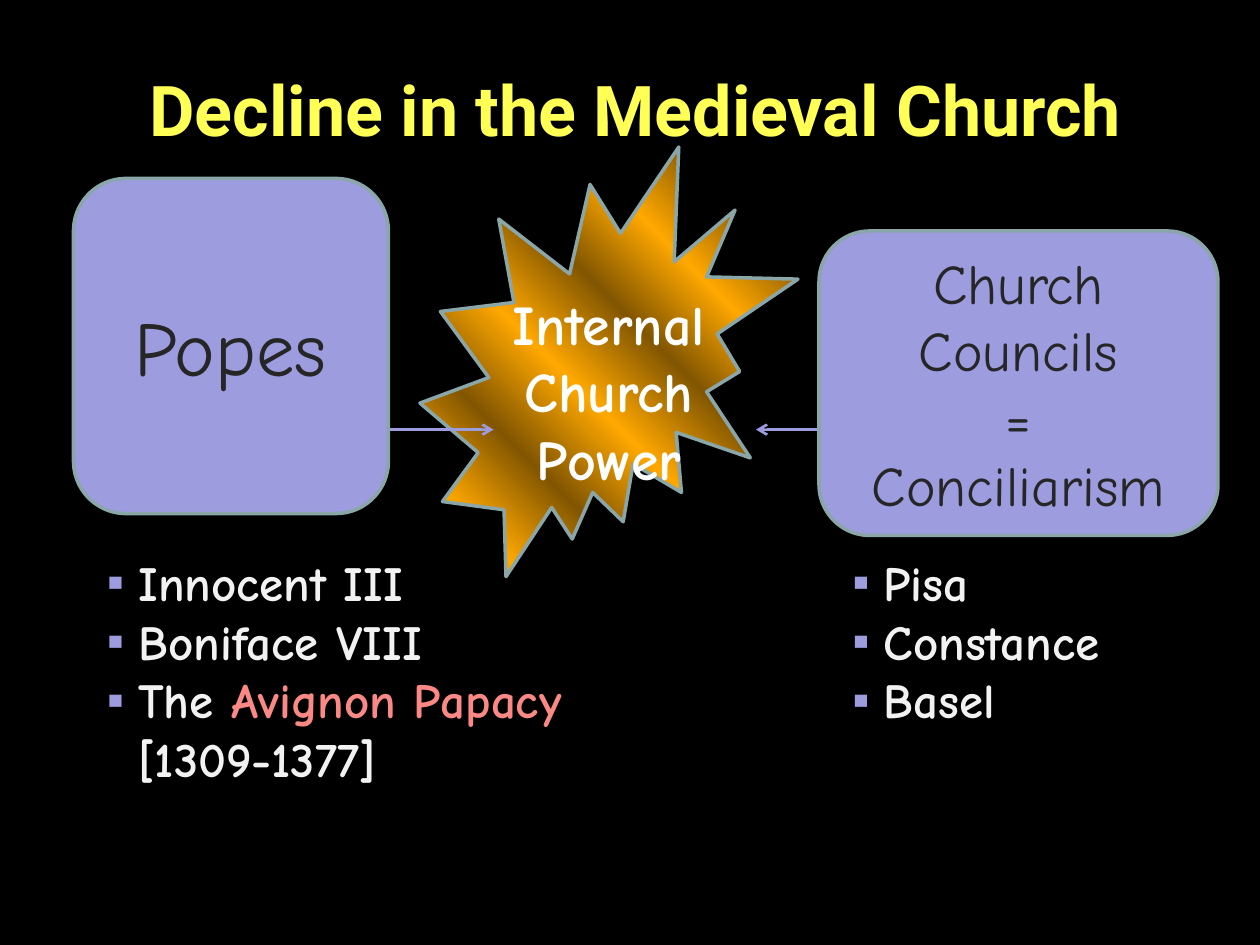
from lxml.etree import SubElement
from pptx import Presentation
from pptx.dml.color import RGBColor
from pptx.enum.shapes import MSO_CONNECTOR as Link, MSO_SHAPE as Shape
from pptx.enum.text import MSO_ANCHOR as Anchor, MSO_AUTO_SIZE as Fit, PP_ALIGN as Align
from pptx.oxml.ns import qn
from pptx.util import Pt

BLACK = RGBColor(0x00, 0x00, 0x00)
WHITE = RGBColor(0xFF, 0xFF, 0xFF)
PALE = RGBColor(0xF2, 0xF2, 0xF2)
DARK = RGBColor(0x26, 0x26, 0x26)
YELLOW = RGBColor(0xFF, 0xFF, 0x55)
LILAC = RGBColor(0x9C, 0x9C, 0xDF)
SAGE = RGBColor(0x8A, 0xA6, 0xA8)
CORAL = RGBColor(0xFA, 0x89, 0x86)
BROWN = RGBColor(0x82, 0x56, 0x00)
GOLD = RGBColor(0xFF, 0xA8, 0x00)

STOPS = (0, 13, 28, 43, 58, 72, 87, 100)
AXIS = 245.5  # height of both arrows


def add_bullet(para):
    props = para._p.get_or_add_pPr()
    props.set("marL", str(Pt(18)))
    props.set("indent", str(Pt(-18)))
    tint = SubElement(props, qn("a:buClr"))
    SubElement(tint, qn("a:srgbClr"), val=str(LILAC))
    SubElement(props, qn("a:buFont"), typeface="Arial")
    SubElement(props, qn("a:buChar"), char="▪")


def write(frame, paras, size, color, font="Comic Neue", bold=False,
          align=Align.CENTER, anchor=Anchor.TOP, fit=Fit.SHAPE_TO_FIT_TEXT,
          bullet=False):
    """Fill a frame; a paragraph is a string or a list of (text, color) runs."""
    frame.word_wrap = True
    frame.auto_size = fit
    frame.vertical_anchor = anchor
    for i, runs in enumerate(paras):
        para = frame.add_paragraph() if i else frame.paragraphs[0]
        para.alignment = align
        if bullet:
            add_bullet(para)
        for text, tone in [(runs, color)] if isinstance(runs, str) else runs:
            for j, line in enumerate(text.split("\n")):
                if j:
                    para.add_line_break()
                if not line:
                    continue
                run = para.add_run()
                run.text = line
                run.font.name = font
                run.font.size = Pt(size)
                run.font.bold = bold
                run.font.color.rgb = tone


def add_title(slide, text):
    title = slide.shapes.title
    title.left, title.top, title.width, title.height = map(Pt, (18, 34.5, 690, 55.5))
    write(title.text_frame, [text], 40, YELLOW, font="Roboto", bold=True)
    title.text_frame.paragraphs[0].space_before = Pt(0)


def add_shape(slide, kind, box):
    shape = slide.shapes.add_shape(kind, *map(Pt, box))
    shape.shadow.inherit = False
    shape.line.color.rgb = SAGE
    shape.line.width = Pt(2)
    return shape


def add_burst(slide, box):
    burst = add_shape(slide, Shape.EXPLOSION2, box)
    burst.fill.gradient()
    burst.fill.gradient_angle = 45
    stops = burst._element.spPr.find(qn("a:gradFill")).find(qn("a:gsLst"))
    for old in list(stops):
        stops.remove(old)
    for i, place in enumerate(STOPS):
        stop = SubElement(stops, qn("a:gs"), pos=str(place * 1000))
        SubElement(stop, qn("a:srgbClr"), val=str(GOLD if i % 2 else BROWN))


def add_card(slide, box, paras, size):
    card = add_shape(slide, Shape.ROUNDED_RECTANGLE, box)
    card.fill.solid()
    card.fill.fore_color.rgb = LILAC
    write(card.text_frame, paras, size, DARK, anchor=Anchor.MIDDLE, fit=Fit.NONE)


def add_arrow(slide, start, end):
    arrow = slide.shapes.add_connector(
        Link.STRAIGHT, Pt(start), Pt(AXIS), Pt(end), Pt(AXIS))
    arrow.line.color.rgb = LILAC
    arrow.line.width = Pt(1.5)
    SubElement(arrow.line._get_or_add_ln(), qn("a:tailEnd"), type="arrow")
    SubElement(arrow._element.spPr, qn("a:effectLst"))


def add_text(slide, box, paras, size, color, **style):
    frame = slide.shapes.add_textbox(*map(Pt, box)).text_frame
    write(frame, paras, size, color, bold=True, **style)


def add_list(slide, box, items):
    add_text(slide, box, items, 28, PALE, align=Align.LEFT, bullet=True)


def main():
    deck = Presentation()
    deck.slide_width, deck.slide_height = Pt(720), Pt(540)
    slide = deck.slides.add_slide(deck.slide_layouts[5])
    slide.background.fill.solid()
    slide.background.fill.fore_color.rgb = BLACK

    add_title(slide, "Decline in the Medieval Church")
    add_burst(slide, (240, 84, 216, 245.5))
    add_arrow(slide, 492, 432)
    add_arrow(slide, 222, 282)
    add_card(slide, (42, 102, 180, 191.5), ["Popes"], 44)
    add_card(slide, (468, 132, 228, 174), ["Church Councils", "=\nConciliarism"], 32)
    add_text(slide, (276, 162, 144, 124), ["Internal\nChurch Power"], 32, WHITE)
    papacy = [("The ", PALE), ("Avignon Papacy\n", CORAL), ("[1309-1377]", PALE)]
    add_list(slide, (54, 312, 312, 143), ["Innocent III", "Boniface VIII", papacy])
    add_list(slide, (480, 312, 204, 109), ["Pisa", "Constance", "Basel"])
    deck.save("out.pptx")


if __name__ == "__main__":
    main()
